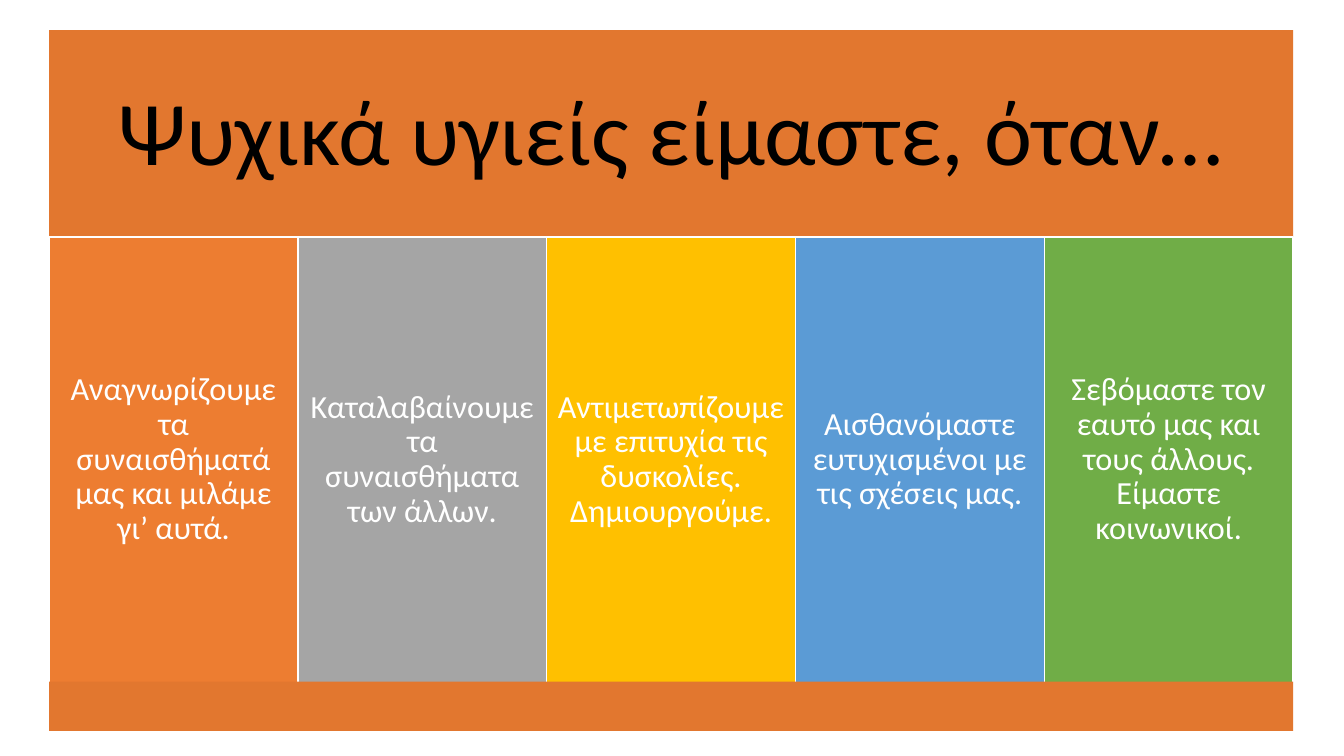
import pptx
import pptx.util
import pptx.dml.color
import pptx.enum.shapes
import pptx.enum.text
from pptx.util import Cm

BAND_COLOUR = "E2772F"
LEFT = 1.24
COLUMN_WIDTH = 6.27
COLUMN_TOP = 5.97
COLUMN_HEIGHT = 11.23

columns = [
    ("Αναγνωρίζουμε τα συναισθήματά μας και μιλάμε γι’ αυτά.", "ED7D31"),
    ("Καταλαβαίνουμε τα συναισθήματα των άλλων.", "A5A5A5"),
    ("Αντιμετωπίζουμε με επιτυχία τις δυσκολίες. Δημιουργούμε.", "FFC000"),
    ("Αισθανόμαστε ευτυχισμένοι με τις σχέσεις μας.", "5B9BD5"),
    ("Σεβόμαστε τον εαυτό μας και τους άλλους. Είμαστε κοινωνικοί.", "70AD47"),
]
band_width = COLUMN_WIDTH * len(columns)


def paint(colour_format, value):
    colour_format.rgb = pptx.dml.color.RGBColor.from_string(value)


def write(box, text, size, colour, inset):
    frame = box.text_frame
    frame.text = text
    frame.word_wrap = True
    frame.auto_size = pptx.enum.text.MSO_AUTO_SIZE.NONE
    frame.vertical_anchor = pptx.enum.text.MSO_ANCHOR.MIDDLE
    frame.margin_left = frame.margin_right = Cm(inset)
    frame.margin_top = frame.margin_bottom = Cm(inset)
    para = frame.paragraphs[0]
    para.alignment = pptx.enum.text.PP_ALIGN.CENTER
    para.line_spacing = 0.9
    span = para.runs[0]
    span.font.name = "Calibri"
    span.font.size = pptx.util.Pt(size)
    paint(span.font.color, colour)


deck = pptx.Presentation()
deck.slide_width = Cm(33.87)
deck.slide_height = Cm(19.05)
page = deck.slides.add_slide(deck.slide_layouts[5])

title = page.shapes.title
title.left, title.top = Cm(LEFT), Cm(0.76)
title.width, title.height = Cm(band_width), Cm(5.33)
title.fill.solid()
paint(title.fill.fore_color, BAND_COLOUR)
write(title, "Ψυχικά υγιείς είμαστε, όταν…", 65, "000000", 0.69)

for index, (text, colour) in enumerate(columns):
    column = page.shapes.add_shape(
        pptx.enum.shapes.MSO_SHAPE.RECTANGLE,
        Cm(LEFT + index * COLUMN_WIDTH), Cm(COLUMN_TOP),
        Cm(COLUMN_WIDTH), Cm(COLUMN_HEIGHT))
    column.shadow.inherit = False
    column.fill.solid()
    paint(column.fill.fore_color, colour)
    paint(column.line.color, "FFFFFF")
    column.line.width = pptx.util.Pt(1)
    write(column, text, 23, "FFFFFF", 0.25)

footer_band = page.shapes.add_shape(
    pptx.enum.shapes.MSO_SHAPE.RECTANGLE,
    Cm(LEFT), Cm(17.18), Cm(band_width), Cm(1.24))
footer_band.shadow.inherit = False
footer_band.fill.solid()
paint(footer_band.fill.fore_color, BAND_COLOUR)
footer_band.line.fill.background()

deck.save("out.pptx")
